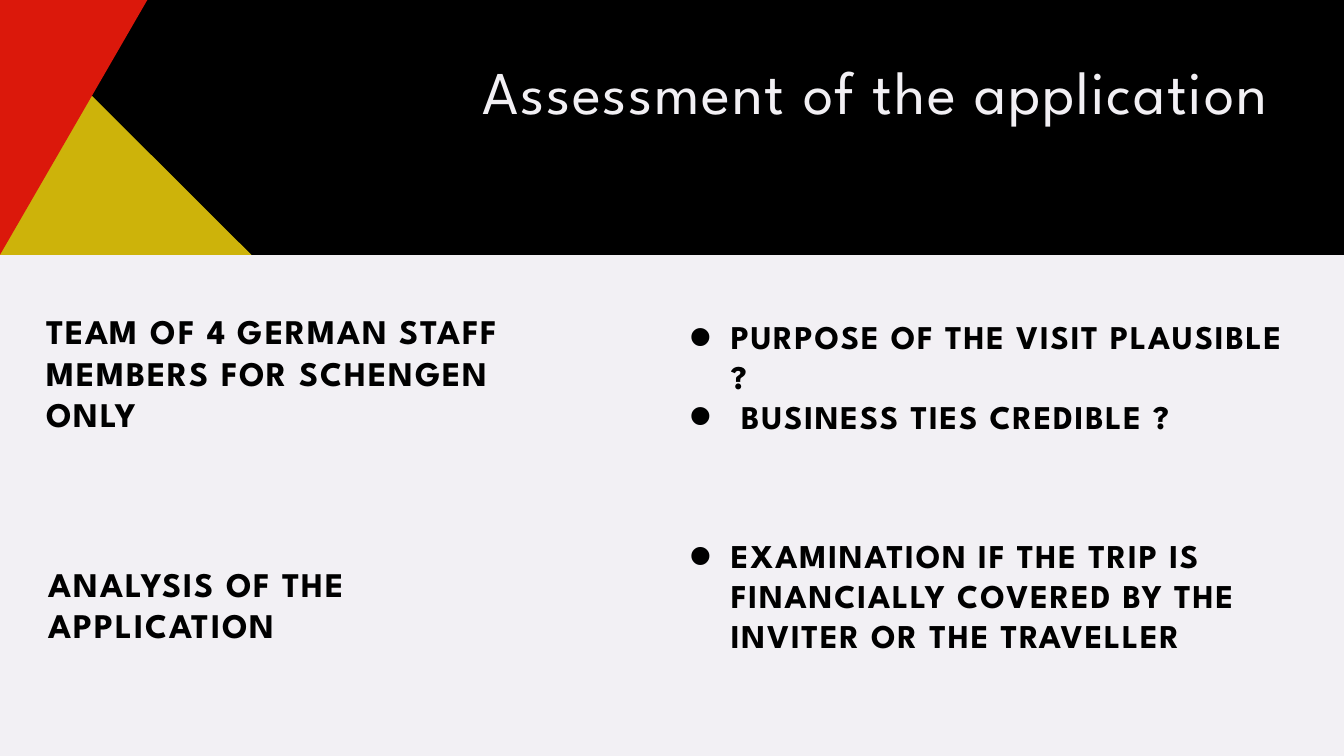
"""Build the slide on how a visa application is assessed."""
from dataclasses import dataclass

from lxml import etree
from pptx import Presentation
from pptx import util as u
from pptx.dml.color import RGBColor
from pptx.enum import shapes, text
from pptx.oxml.ns import qn

BLACK = RGBColor(0x00, 0x00, 0x00)
RED = RGBColor(0xDB, 0x18, 0x0B)
GOLD = RGBColor(0xF1, 0xD3, 0x0C)
PALE = RGBColor(0xF2, 0xF0, 0xF4)
FONT = "League Spartan"
EMU_PER_PX = 9525
BULLET_INDENT = 60
BAND_BOTTOM = 364


@dataclass(frozen=True)
class Box:
    left: int
    top: int
    width: int
    height: int


@dataclass(frozen=True)
class Triangle:
    corners: tuple[tuple[int, int], ...]
    color: RGBColor
    opacity: int = 100


@dataclass(frozen=True)
class Statement:
    box: Box
    lines: tuple[str, ...]
    size: float
    leading: float
    spacing: float
    bulleted: bool = False


TRIANGLES = (
    Triangle(((359, BAND_BOTTOM), (0, BAND_BOTTOM), (0, 6)), GOLD, 85),
    Triangle(((222, -20), (0, BAND_BOTTOM), (-222, -20)), RED),
)
STATEMENTS = (
    Statement(Box(66, 443, 700, 178),
              ("TEAM OF 4 GERMAN STAFF MEMBERS FOR SCHENGEN ONLY",), 37, 44.4, 1.9),
    Statement(Box(70, 804, 739, 119), ("ANALYSIS OF THE APPLICATION",), 37, 44.4, 1.9),
    Statement(Box(984, 452, 860, 174),
              ("PURPOSE OF THE VISIT PLAUSIBLE ?", " BUSINESS TIES CREDIBLE ?"),
              35.5, 42.6, 1.8, True),
    Statement(Box(984, 765, 866, 231),
              ("EXAMINATION IF THE TRIP IS FINANCIALLY COVERED BY THE INVITER OR THE TRAVELLER",),
              35.6, 42.7, 1.8, True),
)


def px(value: int) -> u.Emu:
    """Turn pixels into EMU."""
    return u.Emu(value * EMU_PER_PX)


def place(box: Box) -> tuple[u.Emu, ...]:
    """Return the left, top, width and height of a box in EMU."""
    return px(box.left), px(box.top), px(box.width), px(box.height)


def paint(shape, color: RGBColor, opacity: int = 100) -> None:
    """Give a shape a plain fill without outline or shadow."""
    shape.shadow.inherit = False
    shape.fill.solid()
    shape.fill.fore_color.rgb = color
    shape.line.fill.background()
    if opacity < 100:
        fill_color = shape.fill._xPr.find(qn("a:solidFill"))[0]
        etree.SubElement(fill_color, qn("a:alpha"), val=str(opacity * 1000))


def add_triangle(slide, triangle: Triangle) -> None:
    """Draw a triangle from its corners."""
    start, *others = [(px(x), px(y)) for x, y in triangle.corners]
    builder = slide.shapes.build_freeform(*start)
    builder.add_line_segments(others, close=True)
    paint(builder.convert_to_shape(), triangle.color, triangle.opacity)


def add_bullet(paragraph) -> None:
    """Give a paragraph a hanging bullet at twice the text size."""
    properties = paragraph._p.get_or_add_pPr()
    properties.set("marL", str(px(BULLET_INDENT)))
    properties.set("indent", str(-px(BULLET_INDENT)))
    etree.SubElement(properties, qn("a:buSzPct"), val="200000")
    etree.SubElement(properties, qn("a:buFont"), typeface="Arial")
    etree.SubElement(properties, qn("a:buChar"), char="•")


def add_text(slide, box: Box, lines: tuple[str, ...], *, size: float, leading: float,
             spacing: float, color: RGBColor = BLACK, bold: bool = False,
             align=text.PP_ALIGN.LEFT, bulleted: bool = False) -> None:
    """Add a text box with one paragraph per line of text."""
    frame = slide.shapes.add_textbox(*place(box)).text_frame
    frame.word_wrap = True
    frame.auto_size = text.MSO_AUTO_SIZE.SHAPE_TO_FIT_TEXT
    frame.margin_left = frame.margin_right = frame.margin_top = frame.margin_bottom = 0
    for index, line in enumerate(lines):
        paragraph = frame.add_paragraph() if index else frame.paragraphs[0]
        paragraph.alignment = align
        paragraph.line_spacing = u.Pt(leading)
        if bulleted:
            add_bullet(paragraph)
        run = paragraph.add_run()
        run.text = line
        run.font.name = FONT
        run.font.size = u.Pt(size)
        run.font.bold = bold
        run.font.color.rgb = color
        run._r.get_or_add_rPr().set("spc", str(round(spacing * 100)))


def main() -> None:
    """Build and save the presentation."""
    presentation = Presentation()
    presentation.slide_width, presentation.slide_height = px(1920), px(1080)
    slide = presentation.slides.add_slide(presentation.slide_layouts[6])
    slide.background.fill.solid()
    slide.background.fill.fore_color.rgb = PALE

    band = slide.shapes.add_shape(shapes.MSO_SHAPE.RECTANGLE,
                                  *place(Box(-24, 0, 1944, BAND_BOTTOM)))
    paint(band, BLACK)
    for triangle in TRIANGLES:
        add_triangle(slide, triangle)

    add_text(slide, Box(633, 59, 1179, 241), ("Assessment of the application",), size=65,
             leading=91, spacing=1.9, color=PALE, align=text.PP_ALIGN.RIGHT)
    for statement in STATEMENTS:
        add_text(slide, statement.box, statement.lines, size=statement.size,
                 leading=statement.leading, spacing=statement.spacing, bold=True,
                 bulleted=statement.bulleted)
    presentation.save("out.pptx")


if __name__ == "__main__":
    main()
